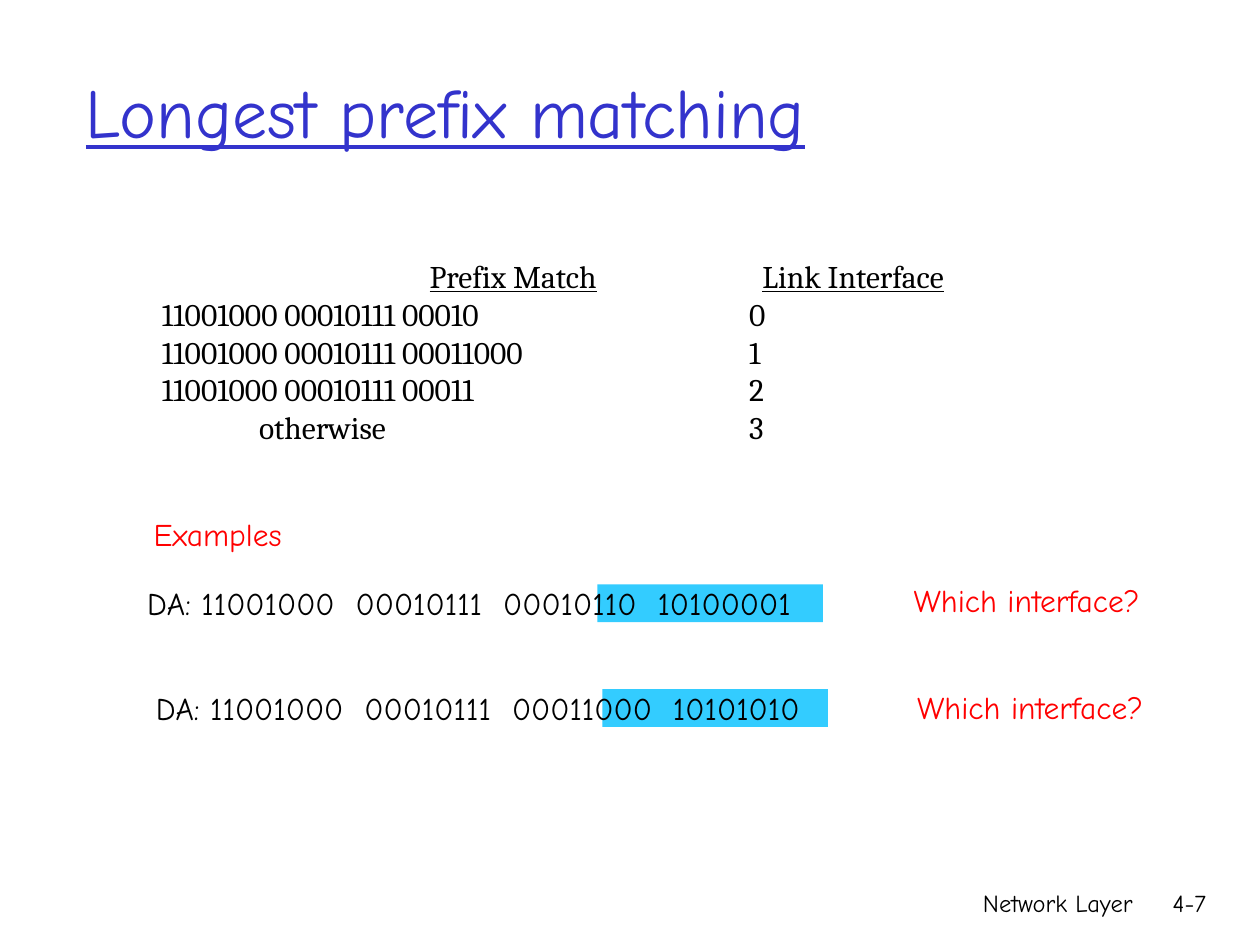
from lxml.etree import SubElement
from pptx import Presentation
from pptx.dml.color import RGBColor
from pptx.enum.shapes import MSO_SHAPE
from pptx.enum.text import MSO_ANCHOR as ANCHOR, MSO_AUTO_SIZE as AUTO, PP_ALIGN as ALIGN
from pptx.oxml.ns import qn
from pptx.util import Pt

COLORS = {"text": "000000", "title": "3333CC", "accent": "FF0000", "bar": "33CCFF"}
ROWS = [
    ("11001000 00010111 00010", "0", 39.5),
    ("11001000 00010111 00011000", "1", 39.5),
    ("11001000 00010111 00011", "2", 39.5),
    ("otherwise", "3", 95),
]
EXAMPLES = [
    ("DA: 11001000  00010111  00010110  10100001", (77, 330), (341.3, 334), (515, 328.3)),
    ("DA: 11001000  00010111  00011000  10101010", (82, 390.3), (344.2, 393.8), (517, 389.5)),
]


class Deck:
    """Holds the style and the current slide, and adds each kind of element."""

    font = "Comic Neue"
    serif = "Cambria"

    def __init__(self):
        self.prs = Presentation()
        self.prs.slide_width, self.prs.slide_height = Pt(720), Pt(540)
        self.s = self.prs.slides.add_slide(self.prs.slide_layouts[5])

    def style(self, r, size, color, font=None, underline=None):
        r.font.name = font or self.font
        r.font.size = Pt(size)
        r.font.color.rgb = RGBColor.from_string(COLORS[color])
        r.font.underline = underline

    def title(self, text, x, y, w, h):
        sp = self.s.shapes.title
        sp.left, sp.top, sp.width, sp.height = Pt(x), Pt(y), Pt(w), Pt(h)
        tf = sp.text_frame
        tf.text = text
        tf.auto_size = AUTO.NONE
        tf.vertical_anchor = ANCHOR.MIDDLE
        p = tf.paragraphs[0]
        p.alignment = ALIGN.LEFT
        self.style(p.runs[0], 40, "title", underline=True)

    def frame(self, x, y, w, h):
        tf = self.s.shapes.add_textbox(Pt(x), Pt(y), Pt(w), Pt(h)).text_frame
        tf.word_wrap = True
        return tf

    def text(self, text, x, y, w, h=28.8, size=18, color="text", align=ALIGN.LEFT):
        tf = self.frame(x, y, w, h)
        tf.text = text
        p = tf.paragraphs[0]
        p.alignment = align
        self.style(p.runs[0], size, color)

    def bar(self, x, y, w, h):
        sp = self.s.shapes.add_shape(MSO_SHAPE.RECTANGLE, Pt(x), Pt(y), Pt(w), Pt(h))
        sp.shadow.inherit = False
        sp.fill.solid()
        sp.fill.fore_color.rgb = RGBColor.from_string(COLORS["bar"])
        sp.line.fill.background()

    def tabbed_row(self, p, cells, stops, underline=None):
        tabs = SubElement(p._p.get_or_add_pPr(), qn("a:tabLst"))
        for cell, stop in zip(cells, stops):
            SubElement(tabs, qn("a:tab"), pos=str(Pt(stop)), algn="l")
            for text, line in (("\t", None), (cell, underline)):
                r = p.add_run()
                r.text = text
                self.style(r, 18, "text", self.serif, line)

    def forwarding_table(self, header, rows, x, y, w, h):
        tf = self.frame(x, y, w, h)
        tf.vertical_anchor = ANCHOR.MIDDLE
        self.tabbed_row(tf.paragraphs[0], header, (192.5, 382.5), True)
        for prefix, link, indent in rows:
            self.tabbed_row(tf.add_paragraph(), (prefix, link), (indent, 375))


def main():
    deck = Deck()
    deck.text("Network Layer", 426.2, 504, 228.2, 36, 14, align=ALIGN.RIGHT)
    deck.text("4-7", 643, 504, 53.3, 36, 14, align=ALIGN.RIGHT)
    deck.title("Longest prefix matching", 41.8, 18, 612, 90)
    deck.forwarding_table(("Prefix Match", "Link Interface"), ROWS, 46, 143.3, 515, 115.2)
    deck.text("Examples", 80.7, 291, 93, color="accent")
    for address, address_at, bar_at, question_at in EXAMPLES:
        deck.bar(*bar_at, 128.9, 21.6)
        deck.text(address, *address_at, 404)
        deck.text("Which interface?", *question_at, 162, color="accent")
    deck.prs.save("out.pptx")


if __name__ == "__main__":
    main()
